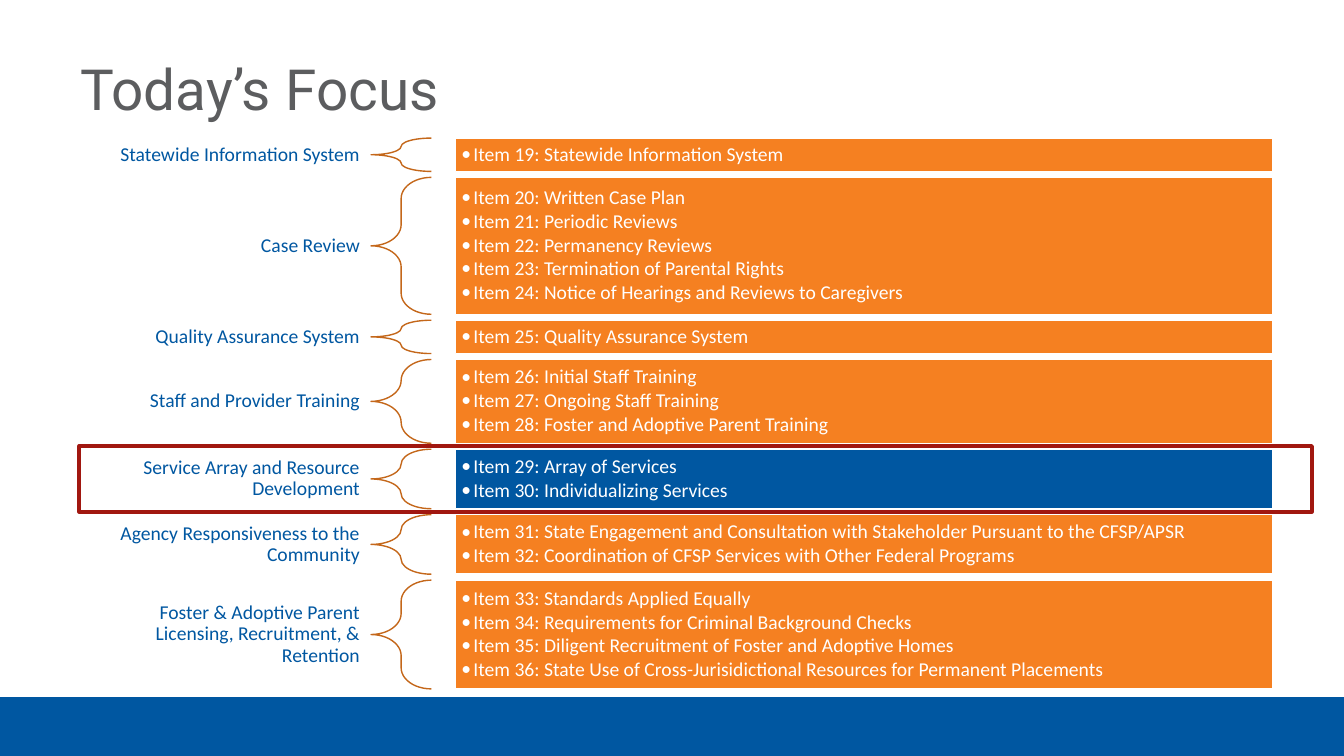
"""Build the Today's Focus slide: review categories, their items and the one in focus."""
from dataclasses import dataclass
from typing import Optional

from lxml.etree import SubElement
from pptx import Presentation
from pptx.dml.color import RGBColor
from pptx.enum.shapes import MSO_SHAPE
from pptx.enum.text import MSO_ANCHOR, PP_ALIGN
from pptx.oxml.ns import qn
from pptx.util import Cm, Pt

BLUE = RGBColor(0x00, 0x57, 0xA1)
ORANGE = RGBColor(0xF5, 0x80, 0x21)
RUST = RGBColor(0xC4, 0x67, 0x1A)
RED = RGBColor(0xA1, 0x17, 0x10)
GRAY = RGBColor(0x5C, 0x5D, 0x5F)
WHITE = RGBColor(0xFF, 0xFF, 0xFF)

TITLE_FONT = {"name": "Roboto", "size": Pt(40.5)}
BODY_FONT = {"name": "Calibri", "size": Pt(14)}
TITLE_FRAME = {"word_wrap": True, "vertical_anchor": MSO_ANCHOR.MIDDLE}
LABEL_FRAME = TITLE_FRAME | {"margin_left": Cm(0.28), "margin_right": Cm(0.28),
                             "margin_top": Cm(0.1), "margin_bottom": Cm(0.1)}
ITEM_FRAME = TITLE_FRAME | {f"margin_{side}": Cm(0.15)
                            for side in ("left", "right", "top", "bottom")}
LABEL_PARAGRAPH = {"line_spacing": 0.9, "alignment": PP_ALIGN.RIGHT}
ITEM_PARAGRAPH = {"line_spacing": 0.9, "alignment": PP_ALIGN.LEFT, "space_after": Pt(1.8)}

FIRST_TOP = 3.48
ROW_GAP = 0.15
LABEL_LEFT, LABEL_WIDTH = 1.78, 7.57
BRACE_LEFT, BRACE_WIDTH = 9.35, 1.52
ITEMS_LEFT, ITEMS_WIDTH = 11.48, 20.6


@dataclass
class Category:
    label: str
    height: float
    items: list[str]
    focus: bool = False


CATEGORIES = [
    Category("Statewide Information System", 0.84,
             ["Item 19: Statewide Information System"]),
    Category("Case Review", 3.45,
             ["Item 20: Written Case Plan",
              "Item 21: Periodic Reviews",
              "Item 22: Permanency Reviews",
              "Item 23: Termination of Parental Rights",
              "Item 24: Notice of Hearings and Reviews to Caregivers"]),
    Category("Quality Assurance System", 0.84,
             ["Item 25: Quality Assurance System"]),
    Category("Staff and Provider Training", 2.11,
             ["Item 26: Initial Staff Training",
              "Item 27: Ongoing Staff Training",
              "Item 28: Foster and Adoptive Parent Training"]),
    Category("Service Array and Resource Development", 1.5,
             ["Item 29: Array of Services",
              "Item 30: Individualizing Services"], focus=True),
    Category("Agency Responsiveness to the Community", 1.5,
             ["Item 31: State Engagement and Consultation with Stakeholder "
              "Pursuant to the CFSP/APSR",
              "Item 32: Coordination of CFSP Services with Other Federal Programs"]),
    Category("Foster & Adoptive Parent Licensing, Recruitment, & Retention", 2.74,
             ["Item 33: Standards Applied Equally",
              "Item 34: Requirements for Criminal Background Checks",
              "Item 35: Diligent Recruitment of Foster and Adoptive Homes",
              "Item 36: State Use of Cross-Jurisidictional Resources "
              "for Permanent Placements"]),
]


def apply(target, values: dict) -> None:
    for name, value in values.items():
        setattr(target, name, value)


def add_bullet(p) -> None:
    pPr = p._p.get_or_add_pPr()
    pPr.set("marL", str(Cm(0.3)))
    pPr.set("indent", str(-Cm(0.3)))
    SubElement(pPr, qn("a:buFont")).set("typeface", "Calibri")
    SubElement(pPr, qn("a:buChar")).set("char", "•")


def write(tf, lines: list[str], frame: dict, paragraph: dict, font: dict,
          color: RGBColor, bullets: bool = False) -> None:
    apply(tf, frame)
    for i, line in enumerate(lines):
        p = tf.add_paragraph() if i else tf.paragraphs[0]
        if bullets:
            add_bullet(p)
        apply(p, paragraph)
        r = p.add_run()
        r.text = line
        apply(r.font, font)
        r.font.color.rgb = color


def add_box(s, left: float, top: float, width: float, height: float):
    return s.shapes.add_textbox(Cm(left), Cm(top), Cm(width), Cm(height))


def add_figure(s, kind: MSO_SHAPE, left: float, top: float, width: float, height: float,
               fill: Optional[RGBColor] = None, line: Optional[RGBColor] = None,
               weight: float = 1):
    sp = s.shapes.add_shape(kind, Cm(left), Cm(top), Cm(width), Cm(height))
    sp.shadow.inherit = False
    if fill is None:
        sp.fill.background()
    else:
        sp.fill.solid()
        sp.fill.fore_color.rgb = fill
    if line is None:
        sp.line.fill.background()
    else:
        sp.line.color.rgb = line
        sp.line.width = Pt(weight)
    return sp


def add_category(s, category: Category, top: float) -> None:
    height = category.height
    label = add_box(s, LABEL_LEFT, top, LABEL_WIDTH, height)
    write(label.text_frame, [category.label], LABEL_FRAME, LABEL_PARAGRAPH, BODY_FONT, BLUE)
    brace = add_figure(s, MSO_SHAPE.LEFT_BRACE, BRACE_LEFT, top, BRACE_WIDTH, height, line=RUST)
    brace.adjustments[0] = 0.35
    bar = add_figure(s, MSO_SHAPE.RECTANGLE, ITEMS_LEFT, top, ITEMS_WIDTH, height,
                     BLUE if category.focus else ORANGE, WHITE)
    write(bar.text_frame, category.items, ITEM_FRAME, ITEM_PARAGRAPH, BODY_FONT, WHITE,
          bullets=True)


def main() -> None:
    prs = Presentation()
    apply(prs, {"slide_width": Cm(33.87), "slide_height": Cm(19.05)})
    s = prs.slides.add_slide(prs.slide_layouts[6])
    add_figure(s, MSO_SHAPE.RECTANGLE, 0, 17.57, 33.87, 1.48, BLUE)
    title = add_box(s, 1.78, 0.94, 30.33, 2.74)
    write(title.text_frame, ["Today’s Focus"], TITLE_FRAME, {"line_spacing": 0.9},
          TITLE_FONT, GRAY)

    top = focus_top = FIRST_TOP
    focus_height = 0.0
    for category in CATEGORIES:
        add_category(s, category, top)
        if category.focus:
            focus_top, focus_height = top, category.height
        top += category.height + ROW_GAP
    add_figure(s, MSO_SHAPE.RECTANGLE, 2, focus_top - ROW_GAP / 2, 31.06,
               focus_height + ROW_GAP, line=RED, weight=3)
    prs.save("out.pptx")


if __name__ == "__main__":
    main()
